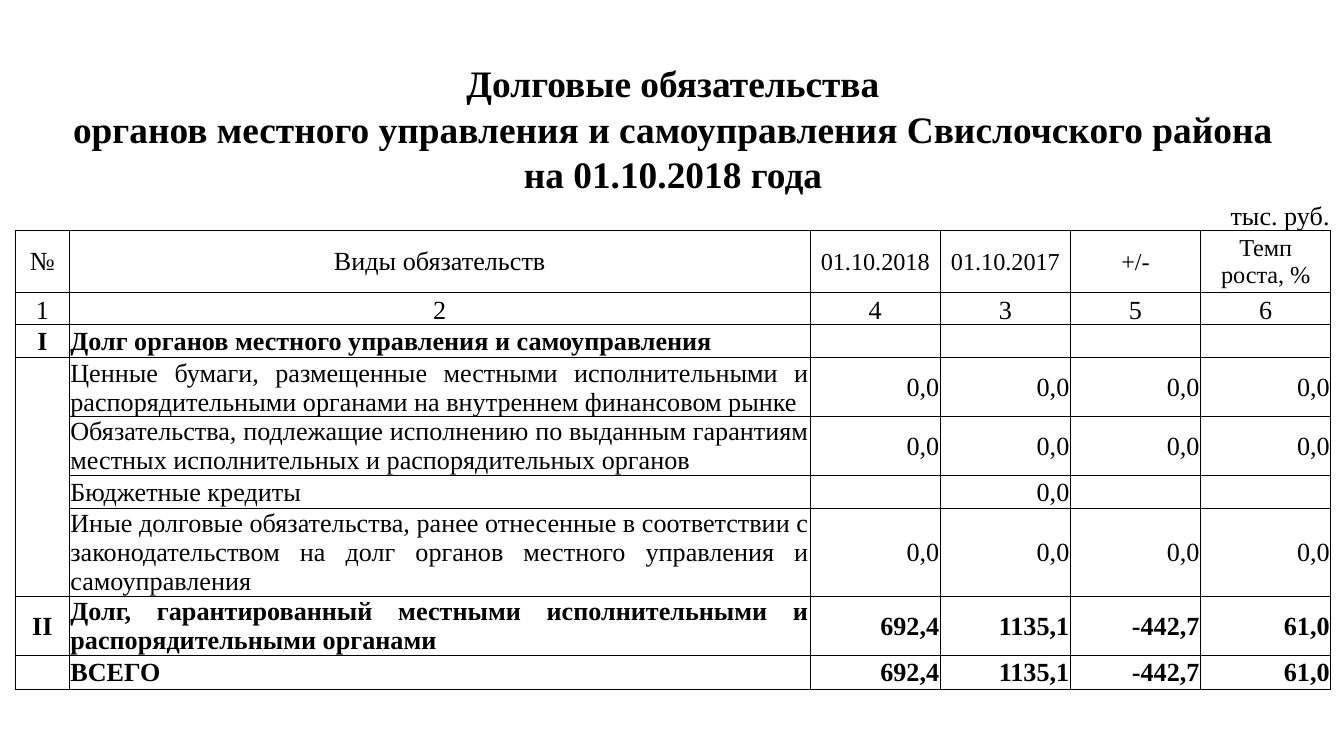
from dataclasses import dataclass

from lxml import etree
from pptx import Presentation
from pptx import util as u
from pptx.dml.color import RGBColor
from pptx.enum import text
from pptx.oxml.ns import qn

LEFT, CENTER, RIGHT, JUSTIFY = (
    text.PP_ALIGN.LEFT, text.PP_ALIGN.CENTER, text.PP_ALIGN.RIGHT, text.PP_ALIGN.JUSTIFY)
MIDDLE, BOTTOM, TOP = (
    text.MSO_ANCHOR.MIDDLE, text.MSO_ANCHOR.BOTTOM, text.MSO_ANCHOR.TOP)


@dataclass(frozen=True)
class Theme:
    font: str = "Times New Roman"
    ink: str = "000000"
    paper: str = "FFFFFF"
    title: float = 20
    body: float = 14
    small: float = 13
    rule: float = 0.5
    inset: float = 0.02


TITLES = ["Долговые обязательства",
          "органов местного управления и самоуправления Свислочского района",
          "на 01.10.2018 года"]
UNIT = "тыс. руб."
HEADINGS = ["№", "Виды обязательств", "01.10.2018", "01.10.2017", "+/-", "Темп\nроста, %"]
NUMBERS = ["1", "2", "4", "3", "5", "6"]
BLANKS = [""] * 4
ZEROS = ["0,0"] * 4
TOTALS = ["692,4", "1135,1", "-442,7", "61,0"]
DEBTS = [
    ["I", "Долг органов местного управления и самоуправления", *BLANKS],
    ["", "Ценные бумаги, размещенные местными исполнительными и распорядительными "
         "органами на внутреннем финансовом рынке", *ZEROS],
    ["", "Обязательства, подлежащие исполнению по выданным гарантиям местных "
         "исполнительных и распорядительных органов", *ZEROS],
    ["", "Бюджетные кредиты", "", "0,0", "", ""],
    ["", "Иные долговые обязательства, ранее отнесенные в соответствии с "
         "законодательством на долг органов местного управления и самоуправления", *ZEROS],
    ["II", "Долг, гарантированный местными исполнительными и распорядительными органами",
     *TOTALS],
    ["", "ВСЕГО", *TOTALS],
]
COLUMN_WIDTHS = [1.02, 14] + [2.46] * 4
ROW_HEIGHTS = [0.86] * 3 + [0.64, 1.16, 0.62, 0.55, 1.11, 1.11, 0.62, 1.66, 1.11, 0.64]
UNIT_ROW, HEADING_ROW, NUMBER_ROW, FIRST_DEBT = 3, 4, 5, 6
BOLD_DEBTS = (0, 5, 6)
DETAILS = range(1, 5)  # debts that share one open cell in the number column


class Page:
    def __init__(self, deck, theme):
        self.theme = theme
        self.slide = deck.slides.add_slide(deck.slide_layouts[6])

    def table(self, left, top, widths, heights):
        frame = self.slide.shapes.add_table(
            len(heights), len(widths), u.Cm(left), u.Cm(top),
            u.Cm(sum(widths)), u.Cm(sum(heights)))
        table = frame.table
        table.first_row = table.horz_banding = False
        for column, width in zip(table.columns, widths):
            column.width = u.Cm(width)
        for row, height in zip(table.rows, heights):
            row.height = u.Cm(height)
        return table

    def borders(self, cell, sides):
        """Rule the sides named among the letters LRTB and clear the others."""
        properties = cell._tc.get_or_add_tcPr()
        for side in "LRTB":
            line = etree.SubElement(properties, qn(f"a:ln{side}"),
                                    w=str(u.Pt(self.theme.rule)))
            if side in sides:
                fill = etree.SubElement(line, qn("a:solidFill"))
                etree.SubElement(fill, qn("a:srgbClr"), val=self.theme.ink)
            else:
                etree.SubElement(line, qn("a:noFill"))

    def cell(self, cell, words, sides="LRTB", anchor=MIDDLE, **style):
        self.borders(cell, sides)
        cell.fill.solid()
        cell.fill.fore_color.rgb = RGBColor.from_string(self.theme.paper)
        cell.vertical_anchor = anchor
        cell.margin_left = cell.margin_right = cell.margin_top = u.Cm(self.theme.inset)
        cell.margin_bottom = 0
        self.put_text(cell.text_frame, words, **style)

    def put_text(self, frame, words, size=None, bold=False, align=LEFT):
        size = size or self.theme.body
        for index, line in enumerate(words.split("\n")):
            para = frame.add_paragraph() if index else frame.paragraphs[0]
            para.alignment = align
            if not line:  # an empty cell must not stretch its row
                etree.SubElement(para._p, qn("a:endParaRPr"), sz=str(int(size * 100)))
                continue
            span = para.add_run()
            span.text = line
            span.font.name = self.theme.font
            span.font.size = u.Pt(size)
            span.font.bold = bold
            span.font.color.rgb = RGBColor.from_string(self.theme.ink)


def fill_heading(page, table):
    last = len(COLUMN_WIDTHS) - 1
    for row, words in enumerate(TITLES + [UNIT]):
        is_unit = row == UNIT_ROW
        table.cell(row, 0).merge(table.cell(row, last))
        for column in range(last + 1):
            page.cell(table.cell(row, column), "" if column else words,
                      sides="B" if is_unit else "", anchor=BOTTOM,
                      size=page.theme.body if is_unit else page.theme.title,
                      bold=not is_unit, align=RIGHT if is_unit else CENTER)
    for column, words in enumerate(HEADINGS):
        page.cell(table.cell(HEADING_ROW, column), words, align=CENTER,
                  size=page.theme.body if column < 2 else page.theme.small)
    for column, words in enumerate(NUMBERS):
        page.cell(table.cell(NUMBER_ROW, column), words, anchor=BOTTOM, align=CENTER)


def fill_debts(page, table):
    aligns = [CENTER, JUSTIFY] + [RIGHT] * 4
    for index, debt in enumerate(DEBTS):
        for column, (words, align) in enumerate(zip(debt, aligns)):
            sides = "LRTB"
            if column == 0 and index in DETAILS:
                sides = ("LR" + "T" * (index == DETAILS[0])
                         + "B" * (index == DETAILS[-1]))
            page.cell(table.cell(FIRST_DEBT + index, column), words, sides=sides,
                      anchor=TOP if (index, column) == (2, 1) else MIDDLE,
                      align=LEFT if words == "ВСЕГО" else align,
                      bold=index in BOLD_DEBTS)


def main():
    deck = Presentation()
    deck.slide_width, deck.slide_height = u.Cm(25.4), u.Cm(14.29)
    page = Page(deck, Theme())
    table = page.table(0.29, 1.14, COLUMN_WIDTHS, ROW_HEIGHTS)
    fill_heading(page, table)
    fill_debts(page, table)
    deck.save("out.pptx")


if __name__ == "__main__":
    main()
